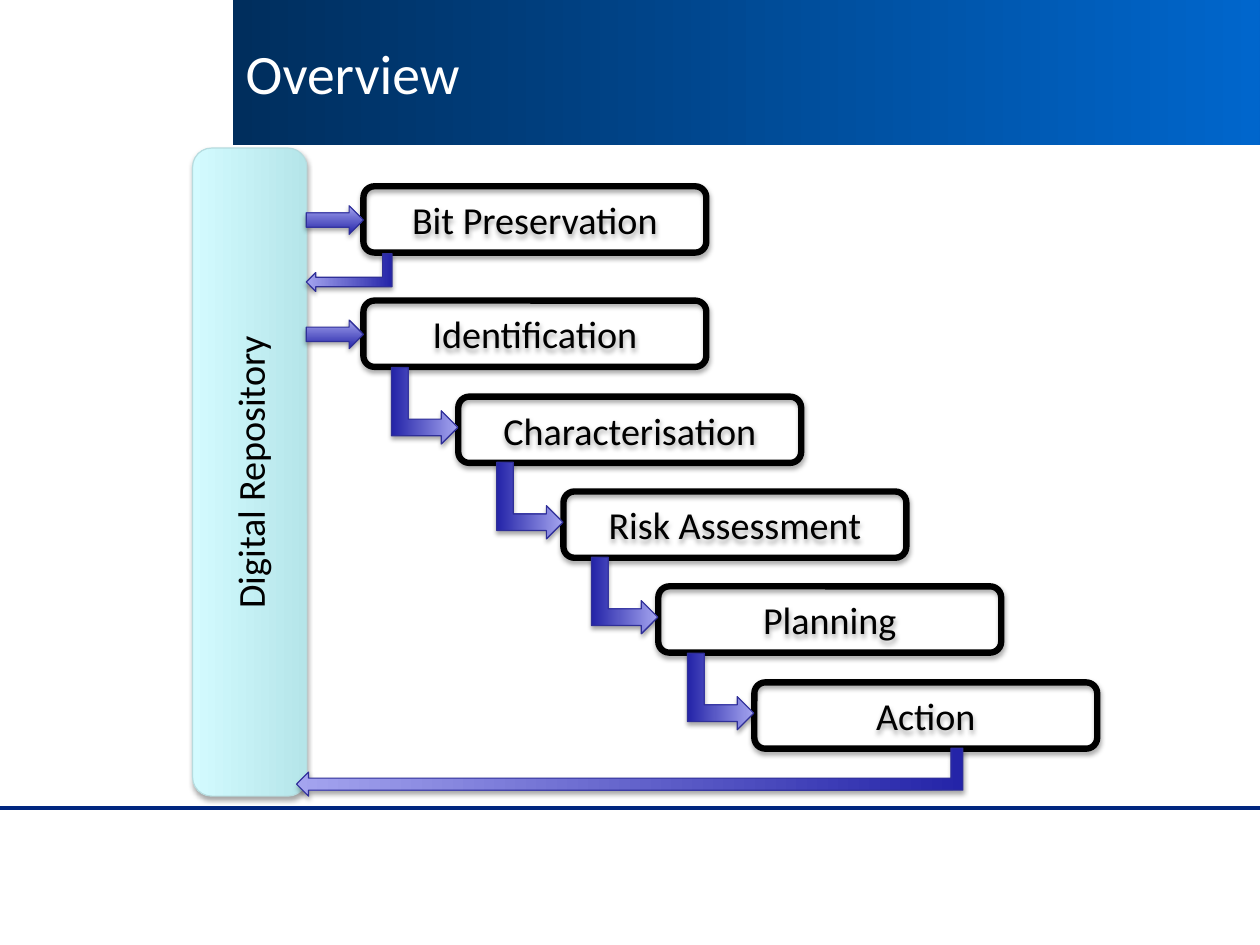
"""Build the overview slide of a digital preservation workflow."""
from lxml import etree
from pptx import Presentation
from pptx.dml.color import RGBColor
from pptx.enum import shapes, text
from pptx.oxml import ns
from pptx.util import Cm, Inches, Pt

SHADOW = (
    f'<a:outerShdw {ns.nsdecls("a")} blurRad="{Pt(3.1)}" dist="{Pt(1.8)}" dir="5400000" rotWithShape="0">'
    '<a:srgbClr val="000000"><a:alpha val="35000"/></a:srgbClr></a:outerShdw>'
)
KIND = shapes.MSO_SHAPE
ARROW_COLOURS = ("2424A8", "A4A4EF")


def add_block(kind, place, line, width, gradient=None, rotation=0, flip=None):
    block = page.shapes.add_shape(kind, *map(Inches, place))
    block.rotation = rotation
    if flip:
        block.element.spPr.xfrm.set(flip, "1")
    if gradient:
        style_gradient(block.fill, gradient, 90)
    else:
        block.fill.background()
    block.line.color.rgb = RGBColor.from_string(line)
    block.line.width = Pt(width)
    block.shadow.inherit = False
    block.element.spPr.find(ns.qn("a:effectLst")).append(etree.fromstring(SHADOW))
    return block


def style_gradient(fill, colours, angle):
    fill.gradient()
    fill.gradient_angle = angle
    for stop, colour in zip(fill.gradient_stops, colours):
        stop.color.rgb = RGBColor.from_string(colour)


deck = Presentation()
deck.slide_width, deck.slide_height = Cm(28), Cm(21)
page = deck.slides.add_slide(deck.slide_layouts[5])

title = page.shapes.title
title.left, title.top, title.width, title.height = map(Inches, (2.04, 0, 8.98, 1.27))
style_gradient(title.fill, ("002E5D", "0066CC"), 0)

rule = page.shapes.add_connector(
    shapes.MSO_CONNECTOR.STRAIGHT, 0, Inches(7.07), deck.slide_width, Inches(7.07)
)
rule.line.color.rgb = RGBColor.from_string("00267F")
rule.line.width = Pt(3)
etree.SubElement(rule.element.spPr, ns.qn("a:effectLst"))

labels = [(title, "Overview", 35, "FFFFFF", text.PP_ALIGN.LEFT)]
steps = [
    ("Bit Preservation", 3.18, 1.63),
    ("Identification", 3.18, 2.63),
    ("Characterisation", 4.01, 3.47),
    ("Risk Assessment", 4.93, 4.3),
    ("Planning", 5.76, 5.13),
    ("Action", 6.6, 5.97),
]
for name, left, top in steps:
    box = add_block(KIND.ROUNDED_RECTANGLE, (left, top, 3, 0.58), "000000", 4)
    labels.append((box, name, 24, "000000", text.PP_ALIGN.CENTER))

for name, left, top in steps[2:]:
    add_block(KIND.BENT_UP_ARROW, (left - 0.63, top - 0.21, 0.67, 0.58), "2F2F98", 0.75, ARROW_COLOURS, 90)

repository = add_block(
    KIND.ROUNDED_RECTANGLE, (-0.65, 3.63, 5.67, 1), "B6DCDF", 0.75, ("B5E5E9", "D3FBFF"), 270
)
labels.append((repository, "Digital Repository", 24, "000000", text.PP_ALIGN.CENTER))

for place in ((2.89, 2.01, 0.33, 0.75), (5.3, 3.84, 0.42, 5.83)):
    add_block(KIND.BENT_UP_ARROW, place, "2F2F98", 0.75, ARROW_COLOURS, 90, "flipV")
for name, left, top in steps[:2]:
    add_block(KIND.LEFT_ARROW, (2.68, top + 0.17, 0.5, 0.25), "2F2F98", 0.75, ARROW_COLOURS, 0, "flipH")

for shape, wording, size, colour, alignment in labels:
    frame = shape.text_frame
    frame.text = wording
    frame.word_wrap = True
    frame.auto_size = text.MSO_AUTO_SIZE.NONE
    frame.vertical_anchor = text.MSO_ANCHOR.MIDDLE
    frame.margin_left = frame.margin_right = Inches(0.11)
    frame.margin_top = frame.margin_bottom = Inches(0.06)
    para = frame.paragraphs[0]
    para.alignment = alignment
    span = para.runs[0]
    span.font.name = "Calibri"
    span.font.size = Pt(size)
    span.font.color.rgb = RGBColor.from_string(colour)

heading = title.text_frame.paragraphs[0].element if hasattr(title.text_frame.paragraphs[0], "element") else None
if heading is None:
    heading = title.element.txBody.find(ns.qn("a:p"))
indents = heading.get_or_add_pPr()
indents.set("marL", str(Inches(0.21)))
indents.set("indent", str(Inches(-0.21)))

deck.save("out.pptx")
